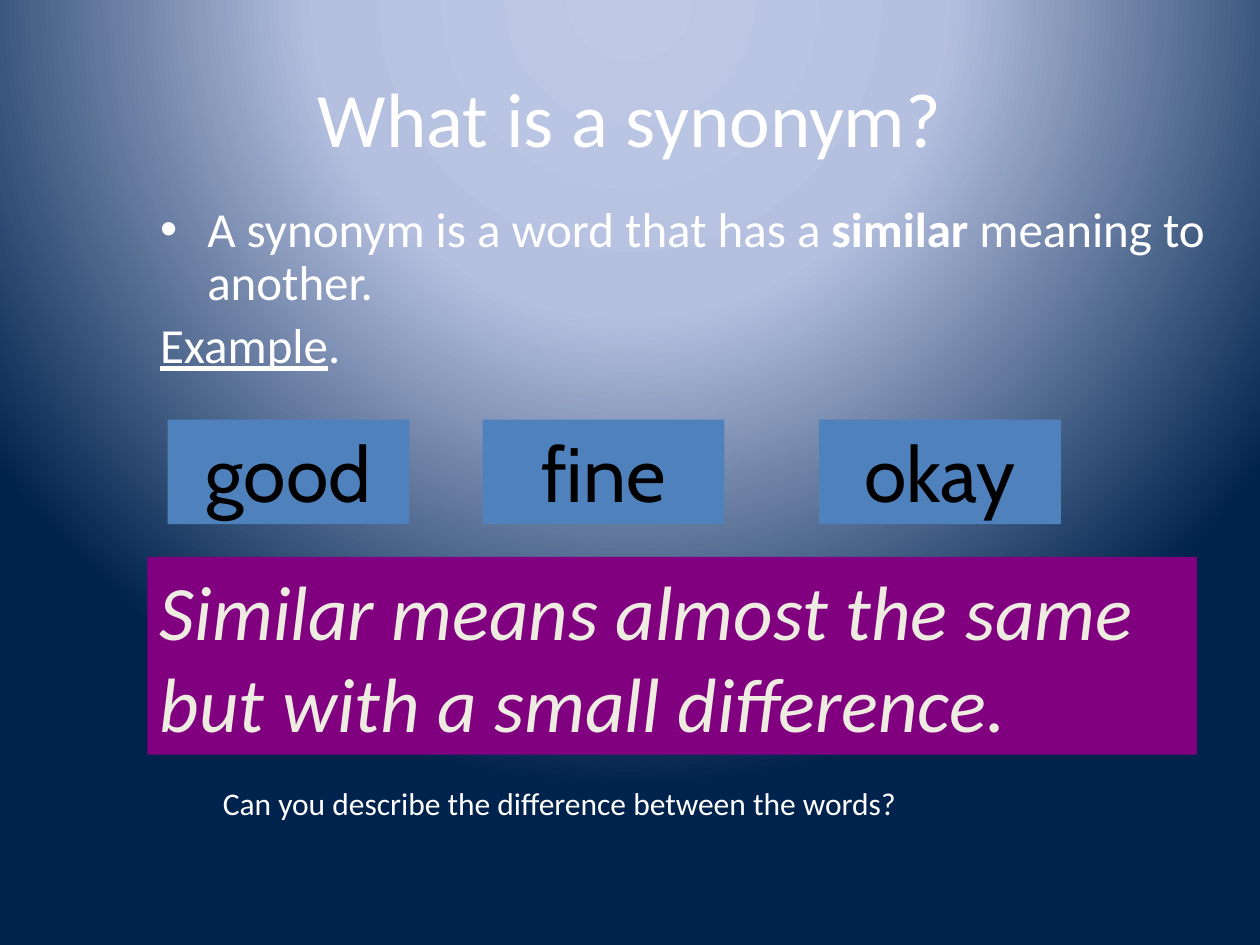
from lxml import etree
from pptx import Presentation
from pptx.dml.color import RGBColor
from pptx.enum.shapes import MSO_SHAPE as Shape
from pptx.enum.text import MSO_ANCHOR as Anchor, PP_ALIGN as Align
from pptx.oxml.ns import qn
from pptx.util import Inches, Pt


def color(code):
    return RGBColor.from_string(code)


class SlideBuilder:
    font = "Calibri"
    word_font = "Cabin"
    white = "FFFFFF"
    black = "000000"
    cream = "EEECE1"
    blue = "4F81BD"
    purple = "800080"

    def __init__(self, slide):
        self.slide = slide

    def background(self, stops, focus):
        self.slide.background.fill.gradient()
        gradient = self.slide.element.find(".//" + qn("a:gradFill"))
        gradient.clear()
        gradient.set("rotWithShape", "1")
        stop_list = etree.SubElement(gradient, qn("a:gsLst"))
        for percent, code in stops:
            stop = etree.SubElement(stop_list, qn("a:gs"), pos=str(percent * 1000))
            etree.SubElement(stop, qn("a:srgbClr"), val=code)
        circle = etree.SubElement(gradient, qn("a:path"))
        circle.set("path", "circle")
        target = etree.SubElement(circle, qn("a:fillToRect"))
        for side, percent in zip("ltrb", focus):
            target.set(side, str(percent * 1000))

    def place(self, box, left, top, width, height):
        box.left, box.top = Inches(left), Inches(top)
        box.width, box.height = Inches(width), Inches(height)

    def add_span(self, para, text, size, code, font=None, **style):
        span = para.add_run()
        span.text = text
        span.font.size = Pt(size)
        span.font.name = font or self.font
        span.font.color.rgb = color(code)
        for name, value in style.items():
            setattr(span.font, name, value)

    def title(self, text, *area):
        box = self.slide.shapes.title
        self.place(box, *area)
        self.add_span(box.text_frame.paragraphs[0], text, 44, self.white)

    def body(self, paragraphs, *area):
        box = self.slide.placeholders[1]
        self.place(box, *area)
        frame = box.text_frame
        for index, (bulleted, spans) in enumerate(paragraphs):
            para = frame.add_paragraph() if index else frame.paragraphs[0]
            para.line_spacing = 0.9
            if not bulleted:
                etree.SubElement(para._p.get_or_add_pPr(), qn("a:buNone"))
            for text, style in spans:
                self.add_span(para, text, 28, self.white, **style)

    def panel(self, text, area, fill, code, align=Align.LEFT, **style):
        box = self.slide.shapes.add_shape(Shape.RECTANGLE, *map(Inches, area))
        box.shadow.inherit = False
        box.fill.solid()
        box.fill.fore_color.rgb = color(fill)
        box.line.fill.background()
        self.add_text(box, text, 44, code, align, **style)

    def note(self, text, *area):
        box = self.slide.shapes.add_textbox(*map(Inches, area))
        self.add_text(box, text, 18, self.white, Align.LEFT)

    def add_text(self, box, text, size, code, align, **style):
        frame = box.text_frame
        frame.word_wrap = True
        frame.vertical_anchor = Anchor.TOP
        para = frame.paragraphs[0]
        para.alignment = align
        self.add_span(para, text, size, code, **style)


def main():
    deck = Presentation()
    deck.slide_width, deck.slide_height = Inches(10), Inches(7.5)
    page = SlideBuilder(deck.slides.add_slide(deck.slide_layouts[1]))

    page.background([(0, "BFC9E5"), (40, "B5C0E0"), (100, "00234D")], (50, -80, 50, 180))
    page.title("What is a synonym?", 0.5, 0.3, 9, 1.25)
    definition = [
        ("A synonym is a word that has a ", {}),
        ("similar", {"bold": True}),
        (" meaning to another.", {}),
    ]
    example = [("Example", {"underline": True}), (".", {})]
    page.body([(True, definition), (False, example)], 1.17, 1.58, 8.5, 1.58)

    for word, left in (("good", 1.33), ("fine", 3.83), ("okay", 6.5)):
        page.panel(word, (left, 3.33, 1.92, 0.83), page.blue, page.black,
                   Align.CENTER, font=page.word_font)

    page.panel("Similar means almost the same but with a small difference.",
               (1.17, 4.42, 8.33, 1.57), page.purple, page.cream, italic=True)
    page.note("Can you describe the difference between the words?", 1.67, 6.17, 7.67, 0.5)

    deck.save("out.pptx")


if __name__ == "__main__":
    main()
